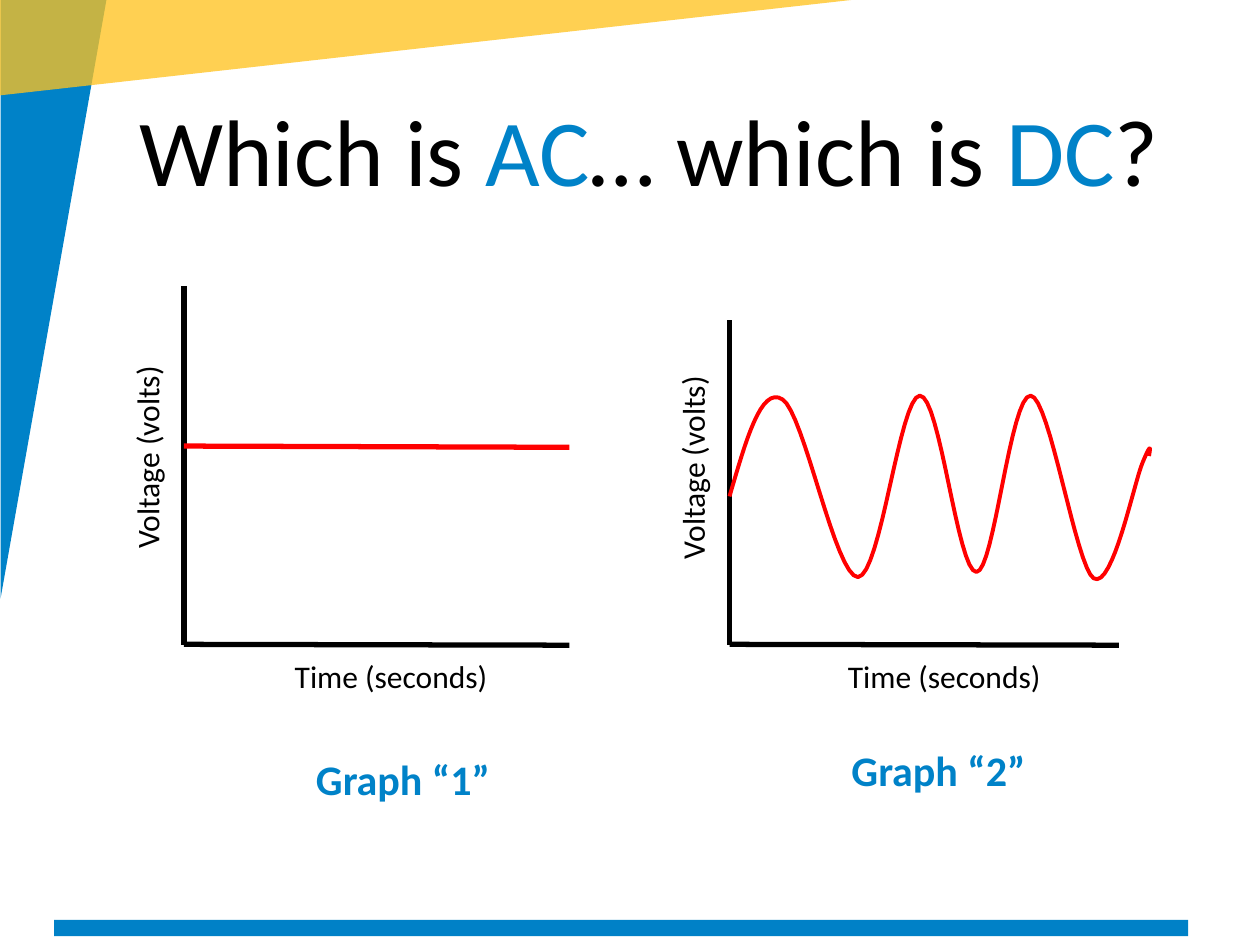
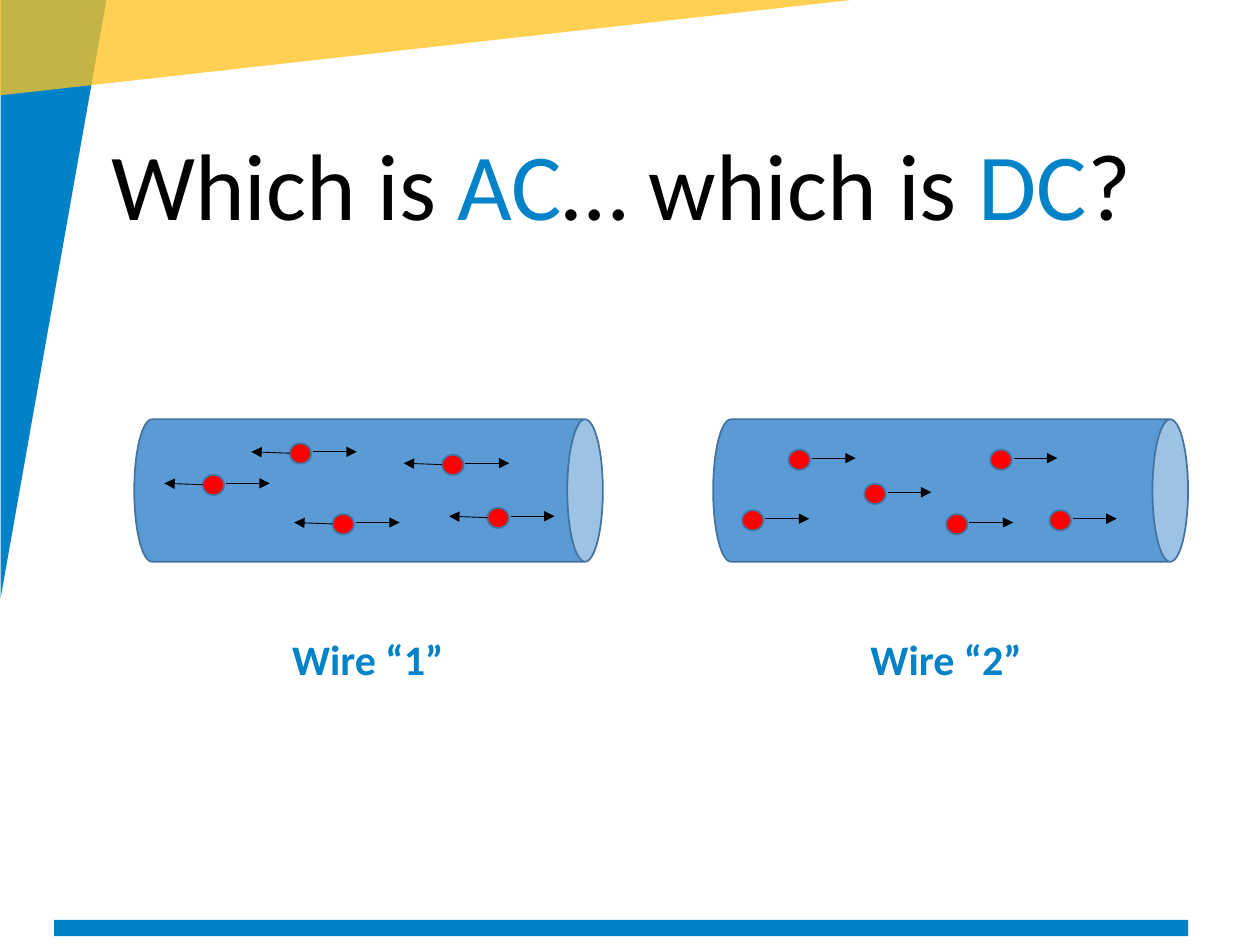
from dataclasses import dataclass

from lxml.etree import SubElement
from pptx import Presentation
from pptx.dml.color import RGBColor
from pptx.enum.shapes import MSO_CONNECTOR as Connector, MSO_SHAPE as Shape
from pptx.enum.text import MSO_ANCHOR as Anchor, MSO_AUTO_SIZE as AutoSize, PP_ALIGN as Align
from pptx.oxml.ns import qn
from pptx.util import Pt


@dataclass(frozen=True)
class Theme:
    font: str = "Calibri"
    blue: str = "0082C8"
    bar: str = "0081C7"
    yellow: str = "FFC31E"
    black: str = "000000"
    red: str = "FF0000"
    wire: str = "5B9BD5"
    outline: str = "43739E"
    title_size: int = 54
    caption_size: int = 24
    label_size: int = 18


THEME = Theme()
TITLE_SPANS = ("Which is ", "AC", "… which is ", "DC", "?")
ELECTRON_SIZE = (12.2, 11.5)

# Start point, then (control, control, end) for each Bézier piece
WAVE_START = (416.9, 283.7)
WAVE_PIECES = [
    ((426.2, 252), (434.9, 220.3), (447.1, 228.2)),
    ((459.4, 235.4), (477.4, 329.8), (490.3, 329.8)),
    ((503.3, 329), (514.1, 226.8), (525.6, 226.1)),
    ((537.1, 225.4), (547.2, 326.9), (558, 326.9)),
    ((568.1, 326.9), (577.4, 225.4), (589, 226.1)),
    ((599.8, 226.8), (614.9, 324), (625, 330.5)),
    ((635.8, 337), (648, 275.8), (653, 264.2)),
    ((658.1, 252), (657.4, 256.3), (656.6, 260.6)),
]
AC_ELECTRONS = [(115.9, 271.4), (190.1, 293.8), (252.7, 259.9), (165.6, 253.4), (278.6, 290.2)]
DC_ELECTRONS = [(450.7, 257), (424.1, 291.6), (493.9, 276.5), (565.9, 257), (599.8, 291.6),
                (540.7, 293.8)]


def rgb(color):
    return RGBColor.from_string(color)


def add_solid(page, kind, left, top, width, height, fill, outline=None):
    shape = page.shapes.add_shape(kind, Pt(left), Pt(top), Pt(width), Pt(height))
    shape.shadow.inherit = False
    shape.fill.solid()
    shape.fill.fore_color.rgb = rgb(fill)
    if outline:
        shape.line.color.rgb = rgb(outline)
        shape.line.width = Pt(1)
    else:
        shape.line.fill.background()
    return shape


def add_quarter_turned(page, kind, left, top, width, height, fill, outline=None):
    """Turn a shape by 90 degrees so that it covers the given box."""
    shape = add_solid(page, kind, left + (width - height) / 2, top + (height - width) / 2,
                      height, width, fill, outline)
    shape.rotation = 90
    return shape


def add_line(page, start, end, color=THEME.black, width=3, arrow=False):
    line = page.shapes.add_connector(Connector.STRAIGHT, *(Pt(v) for v in (*start, *end)))
    line.line.color.rgb = rgb(color)
    line.line.width = Pt(width)
    if arrow:
        SubElement(line.line._get_or_add_ln(), qn("a:tailEnd"), type="triangle")
    SubElement(line._element.spPr, qn("a:effectLst"))


def style_span(span, size, color, bold=False):
    span.font.name = THEME.font
    span.font.size = Pt(size)
    span.font.bold = bold
    span.font.color.rgb = rgb(color)


def add_label(page, text, left, top, width, height=28.8, size=THEME.label_size,
              color=THEME.black, bold=False, rotation=0):
    box = page.shapes.add_textbox(Pt(left), Pt(top), Pt(width), Pt(height))
    box.rotation = rotation
    frame = box.text_frame
    frame.text = text
    frame.word_wrap = False
    frame.auto_size = AutoSize.SHAPE_TO_FIT_TEXT
    style_span(frame.paragraphs[0].runs[0], size, color, bold)


def add_caption(page, text, left, top, width):
    add_label(page, text, left, top, width, 36, THEME.caption_size, THEME.blue, True)


def add_title(page, left, top):
    box = page.shapes.add_textbox(Pt(left), Pt(top), Pt(620.6), Pt(79.9))
    frame = box.text_frame
    frame.word_wrap = True
    frame.vertical_anchor = Anchor.TOP
    para = frame.paragraphs[0]
    para.alignment = Align.CENTER
    para.line_spacing = 0.9
    for text in TITLE_SPANS:
        span = para.add_run()
        span.text = text
        style_span(span, THEME.title_size, THEME.blue if text in ("AC", "DC") else THEME.black)


def add_page(deck, title_left, title_top):
    """Add a page with the corner triangles, the bottom bar and the title."""
    page = deck.slides.add_slide(deck.slide_layouts[6])
    add_quarter_turned(page, Shape.RIGHT_TRIANGLE, 0.3, 0, 60.5, 342, THEME.blue)
    band = add_quarter_turned(page, Shape.RIGHT_TRIANGLE, -15.1, -1.4, 514.1, 57.6, THEME.yellow)
    color = band.fill._xPr.find(qn("a:solidFill"))[0]
    SubElement(color, qn("a:alpha"), val="77000")
    add_solid(page, Shape.RECTANGLE, 31, 525.6, 648, 9.4, THEME.bar)
    add_title(page, title_left, title_top)
    return page


def add_axes(page, left, top, right, voltage_at, time_at):
    bottom = 368.2
    add_line(page, (left, top), (left, bottom + 0.5))
    add_line(page, (right, bottom + 0.5), (left, bottom))
    add_label(page, "Voltage (volts)", *voltage_at, 120.2, rotation=270)
    add_label(page, "Time (seconds)", *time_at, 126)


def bezier_points(start, pieces, steps=16):
    for first, second, end in pieces:
        for step in range(1, steps + 1):
            t = step / steps
            weights = ((1 - t) ** 3, 3 * t * (1 - t) ** 2, 3 * t * t * (1 - t), t ** 3)
            corners = (start, first, second, end)
            yield tuple(sum(w * p[axis] for w, p in zip(weights, corners)) for axis in (0, 1))
        start = end


def add_wave(page):
    builder = page.shapes.build_freeform(*(Pt(v) for v in WAVE_START))
    points = [(Pt(x), Pt(y)) for x, y in bezier_points(WAVE_START, WAVE_PIECES)]
    builder.add_line_segments(points, close=False)
    wave = builder.convert_to_shape()
    wave.shadow.inherit = False
    wave.fill.background()
    wave.line.color.rgb = rgb(THEME.red)
    wave.line.width = Pt(2.25)


def add_wire(page, left, width, electrons, both_ways):
    add_quarter_turned(page, Shape.CAN, left, 239.6, width, 81.4, THEME.wire, THEME.outline)
    for x, y in electrons:
        add_solid(page, Shape.OVAL, x, y, *ELECTRON_SIZE, THEME.red, THEME.outline)
        add_line(page, (x + 13.3, y + 4.8), (x + 38.3, y + 4.8), width=0.5, arrow=True)
        if both_ways:
            add_line(page, (x, y + 5.6), (x - 22, y + 4.8), width=0.5, arrow=True)


def build_graphs(deck):
    page = add_page(deck, 60.5, 56.2)
    add_axes(page, 105.1, 163.4, 325.4, (23.8, 246.2), (161.3, 372.2))
    add_line(page, (105.1, 254.9), (325.4, 255.6), THEME.red)
    add_axes(page, 416.9, 182.9, 639.4, (335.5, 252), (477.4, 372.2))
    add_wave(page)
    add_caption(page, "Graph “1”", 173.5, 427, 115.2)
    add_caption(page, "Graph “2”", 479.5, 421.9, 115.2)


def build_wires(deck):
    page = add_page(deck, 44.6, 75.6)
    add_wire(page, 76.7, 267.8, AC_ELECTRONS, both_ways=True)
    add_wire(page, 407.5, 271.4, DC_ELECTRONS, both_ways=False)
    add_caption(page, "Wire “1”", 159.8, 358.6, 101.5)
    add_caption(page, "Wire “2”", 490.3, 358.6, 101.5)


def main():
    deck = Presentation()
    deck.slide_width, deck.slide_height = Pt(720), Pt(540)
    build_graphs(deck)
    build_wires(deck)
    deck.save("out.pptx")


if __name__ == "__main__":
    main()
